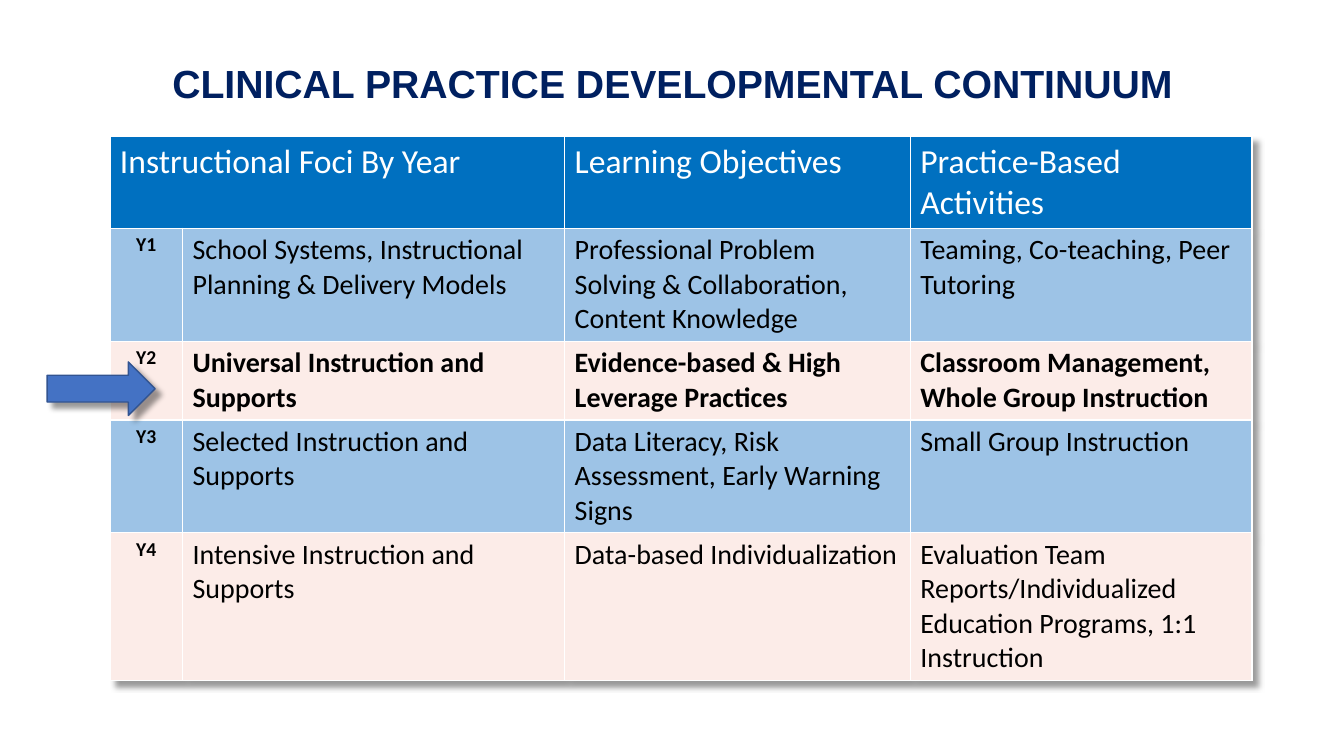
from lxml.etree import SubElement
from pptx import Presentation
from pptx.dml.color import RGBColor
from pptx.enum.shapes import MSO_SHAPE as Shape
from pptx.enum.text import MSO_ANCHOR as Anchor, PP_ALIGN as Align
from pptx.oxml.ns import qn
from pptx.util import Cm, Pt

NAVY = RGBColor(0x00, 0x20, 0x60)
HEADER_BLUE = RGBColor(0x00, 0x70, 0xC0)
LIGHT_BLUE = RGBColor(0x9D, 0xC3, 0xE6)
LIGHT_PINK = RGBColor(0xFC, 0xEC, 0xE8)
ARROW_BLUE = RGBColor(0x44, 0x72, 0xC4)
ARROW_EDGE = RGBColor(0x32, 0x54, 0x91)
WHITE = RGBColor(0xFF, 0xFF, 0xFF)
BLACK = RGBColor(0x00, 0x00, 0x00)

HEADINGS = ["Instructional Foci By Year", "", "Learning Objectives",
            "Practice-Based Activities"]
YEARS = [
    ["Y1", "School Systems, Instructional Planning & Delivery Models",
     "Professional Problem Solving & Collaboration, Content Knowledge",
     "Teaming, Co-teaching, Peer Tutoring"],
    ["Y2", "Universal Instruction and Supports",
     "Evidence-based & High Leverage Practices",
     "Classroom Management, Whole Group Instruction"],
    ["Y3", "Selected Instruction and Supports",
     "Data Literacy, Risk Assessment, Early Warning Signs",
     "Small Group Instruction"],
    ["Y4", "Intensive Instruction and Supports",
     "Data-based Individualization",
     "Evaluation Team Reports/Individualized Education Programs, 1:1 Instruction"],
]
CURRENT_YEAR = "Y2"
COLUMN_WIDTHS = [1.83, 9.63, 8.71, 8.61]
ROW_HEIGHTS = [2.18, 2.67, 1.85, 2.67, 3.45]


def write(frame, text, size, color=BLACK, font="Calibri", bold=False, align=Align.LEFT):
    para = frame.paragraphs[0]
    para.alignment = align
    span = para.add_run()
    span.text = text
    span.font.name = font
    span.font.size = Pt(size)
    span.font.bold = bold
    span.font.color.rgb = color
    return para


def add_shadow(effects):
    shadow = SubElement(effects, qn("a:outerShdw"), blurRad=str(Pt(4)), dist=str(Pt(6)),
                        dir="2700000", algn="tl", rotWithShape="0")
    black = SubElement(shadow, qn("a:srgbClr"), val="000000")
    SubElement(black, qn("a:alpha"), val="40000")


deck = Presentation()
deck.slide_width, deck.slide_height = Cm(33.87), Cm(19.05)
page = deck.slides.add_slide(deck.slide_layouts[5])

# Title
title = page.shapes.title
title.left, title.top, title.width, title.height = Cm(2.34), Cm(0.33), Cm(29.21), Cm(3.68)
title.text_frame.vertical_anchor = Anchor.MIDDLE
heading = write(title.text_frame, "CLINICAL PRACTICE DEVELOPMENTAL CONTINUUM", 28,
                color=NAVY, font="Arial", bold=True, align=Align.CENTER)
heading.line_spacing = 0.9

# Continuum table
table = page.shapes.add_table(len(YEARS) + 1, len(HEADINGS), Cm(2.77), Cm(3.43),
                              Cm(sum(COLUMN_WIDTHS)), Cm(sum(ROW_HEIGHTS))).table
for column, width in zip(table.columns, COLUMN_WIDTHS):
    column.width = Cm(width)
for row, height in zip(table.rows, ROW_HEIGHTS):
    row.height = Cm(height)

# Table shadow, placed ahead of the table style
properties = table._tbl.tblPr
effects = SubElement(properties, qn("a:effectLst"))
add_shadow(effects)
properties.insert(0, effects)

# Header row
table.cell(0, 0).merge(table.cell(0, 1))
for cell, text in zip(table.rows[0].cells, HEADINGS):
    cell.fill.solid()
    cell.fill.fore_color.rgb = HEADER_BLUE
    if text:
        write(cell.text_frame, text, 24, color=WHITE)

# One row per year, with the current year in bold
for number, texts in enumerate(YEARS, start=1):
    year = texts[0]
    for cell, text in zip(table.rows[number].cells, texts):
        cell.fill.solid()
        cell.fill.fore_color.rgb = LIGHT_BLUE if number % 2 else LIGHT_PINK
        if text == year:
            write(cell.text_frame, text, 14, bold=True, align=Align.CENTER)
        else:
            write(cell.text_frame, text, 20, bold=year == CURRENT_YEAR)

# Arrow to the current year
arrow = page.shapes.add_shape(Shape.RIGHT_ARROW, Cm(1.19), Cm(9.12), Cm(2.72), Cm(1.35))
arrow.fill.solid()
arrow.fill.fore_color.rgb = ARROW_BLUE
arrow.line.color.rgb = ARROW_EDGE
arrow.line.width = Pt(1)
arrow.shadow.inherit = False
add_shadow(arrow._element.spPr.find(qn("a:effectLst")))

deck.save("out.pptx")
